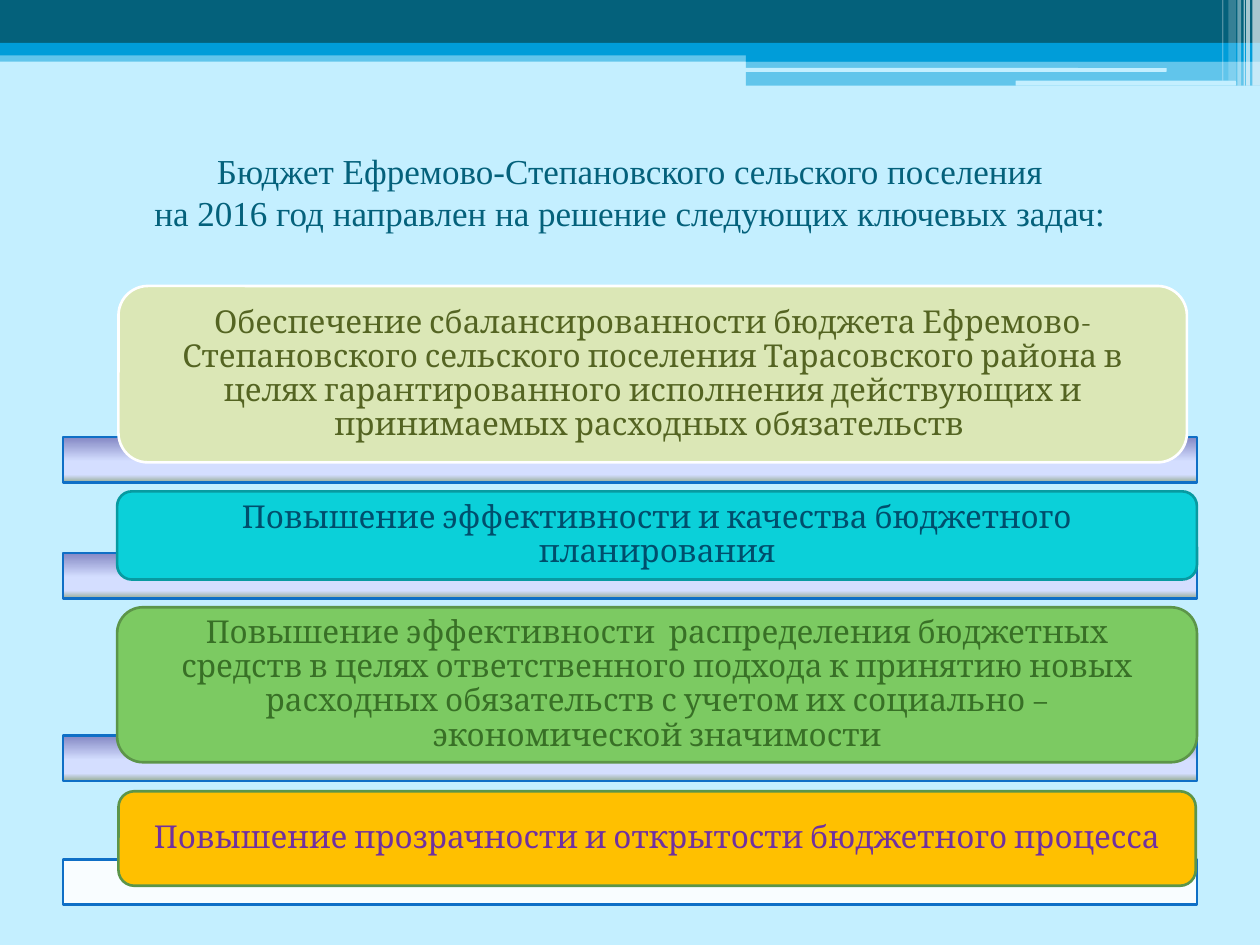
from lxml import etree
from pptx import Presentation
from pptx.dml.color import RGBColor
from pptx.enum.shapes import MSO_SHAPE
from pptx.enum.text import MSO_ANCHOR, PP_ALIGN
from pptx.oxml.ns import qn
from pptx.util import Inches, Pt

RECT = MSO_SHAPE.RECTANGLE
ROUND = MSO_SHAPE.ROUNDED_RECTANGLE
CENTER = PP_ALIGN.CENTER
MIDDLE = MSO_ANCHOR.MIDDLE

PALE, DARK, BLUE, WHITE = "C4EFFF", "04617B", "009DD9", "FFFFFF"
BAR_STOPS = [(0, "8488C4"), (53, "D4DEFF"), (83, "D4DEFF"), (100, "96AB94")]


def rgb(value):
    return RGBColor.from_string(value)


def write(tf, text, size=18, font="Cambria", color=DARK, spacing=1.0, margin=0.1):
    tf.word_wrap = True
    tf.vertical_anchor = MIDDLE
    tf.margin_left = tf.margin_right = Inches(margin)
    tf.margin_top = tf.margin_bottom = 0
    p = tf.paragraphs[0]
    p.alignment = CENTER
    p.line_spacing = spacing
    for i, line in enumerate(text.split("\n")):
        if i:
            p.add_line_break()
        r = p.add_run()
        r.text = line
        r.font.size = Pt(size)
        r.font.name = font
        r.font.color.rgb = rgb(color)


class Deck:
    def __init__(self, prs, background):
        self.s = prs.slides.add_slide(prs.slide_layouts[6])
        fill = self.s.background.fill
        fill.solid()
        fill.fore_color.rgb = rgb(background)

    def shape(self, kind, box, fill, line=None, alpha=100):
        sp = self.s.shapes.add_shape(kind, *map(Inches, box))
        sp.shadow.inherit = False
        if isinstance(fill, list):
            self.gradient(sp, fill)
        else:
            sp.fill.solid()
            sp.fill.fore_color.rgb = rgb(fill)
        if alpha < 100:
            clr = sp.fill._xPr.find(".//" + qn("a:srgbClr"))
            etree.SubElement(clr, qn("a:alpha"), val=str(alpha * 1000))
        if line:
            sp.line.color.rgb = rgb(line)
            sp.line.width = Pt(1.5)
        else:
            sp.line.fill.background()
        return sp

    def gradient(self, sp, stops):
        sp.fill.gradient()
        sp.fill.gradient_angle = 270
        gs_list = sp._element.spPr.find(".//" + qn("a:gsLst"))
        for gs in list(gs_list):
            gs_list.remove(gs)
        for pos, color in stops:
            gs = etree.SubElement(gs_list, qn("a:gs"), pos=str(pos * 1000))
            etree.SubElement(gs, qn("a:srgbClr"), val=color)

    def text(self, box, text, **fmt):
        tb = self.s.shapes.add_textbox(*map(Inches, box))
        write(tb.text_frame, text, **fmt)

    def task(self, box, text, fill, line, color):
        sp = self.shape(ROUND, box, fill, line)
        write(sp.text_frame, text, color=color, spacing=0.9, margin=0.24)


def main():
    prs = Presentation()
    prs.slide_width, prs.slide_height = Inches(10), Inches(7.5)
    deck = Deck(prs, PALE)

    # Header bands
    for kind, box, fill, alpha in [
        (RECT, (0, 0.4, 10, 0.09), BLUE, 50),
        (RECT, (0, 0, 10, 0.34), DARK, 100),
        (RECT, (0, 0.34, 10, 0.1), BLUE, 100),
        (RECT, (5.92, 0.39, 4.08, 0.1), BLUE, 100),
        (RECT, (5.92, 0.48, 4.08, 0.2), BLUE, 50),
        (ROUND, (5.91, 0.54, 3.35, 0.03), PALE, 100),
        (ROUND, (8.06, 0.64, 1.75, 0.04), PALE, 100),
    ]:
        deck.shape(kind, box, fill, alpha=alpha)

    # Thin vertical stripes in the corner
    for x, w, h, alpha in [
        (9.94, 0.06, 0.68, 65), (9.89, 0.03, 0.68, 65), (9.87, 0.01, 0.68, 60),
        (9.82, 0.03, 0.68, 40), (9.75, 0.06, 0.64, 20), (9.7, 0.01, 0.64, 30),
    ]:
        deck.shape(RECT, (x, 0, w, h), WHITE, alpha=alpha)

    # Title
    deck.text((0.5, 0.78, 9, 1.48),
              "Бюджет Ефремово-Степановского сельского поселения\n"
              "на 2016 год направлен на решение следующих ключевых задач:",
              size=20, font="Times New Roman")

    # Tasks, each in front of its bar
    tasks = [
        (3.47, BAR_STOPS, 100, (0.94, 2.27, 8.48, 1.4), "DBE7B6", WHITE, "546422",
         "Обеспечение сбалансированности бюджета Ефремово-Степановского "
         "сельского поселения Тарасовского района в целях гарантированного "
         "исполнения действующих и принимаемых расходных обязательств "),
        (4.39, BAR_STOPS, 100, (0.93, 3.9, 8.57, 0.7), "0BD0D9", "089AA1", "004E6C",
         "Повышение эффективности и качества бюджетного планирования"),
        (5.84, BAR_STOPS, 100, (0.93, 4.82, 8.57, 1.23), "7CCA62", "5C9549", "387026",
         "Повышение эффективности  распределения бюджетных средств в целях "
         "ответственного подхода к принятию новых расходных обязательств "
         "с учетом их социально – экономической значимости"),
        (6.82, WHITE, 90, (0.94, 6.28, 8.55, 0.75), "FFC000", "5C9549", "7030A0",
         "Повышение прозрачности и открытости бюджетного процесса"),
    ]
    for bar_top, bar_fill, alpha, box, fill, line, color, text in tasks:
        deck.shape(RECT, (0.5, bar_top, 9, 0.36), bar_fill, "0F6FC6", alpha)
        deck.task(box, text, fill, line, color)

    prs.save("out.pptx")


if __name__ == "__main__":
    main()
